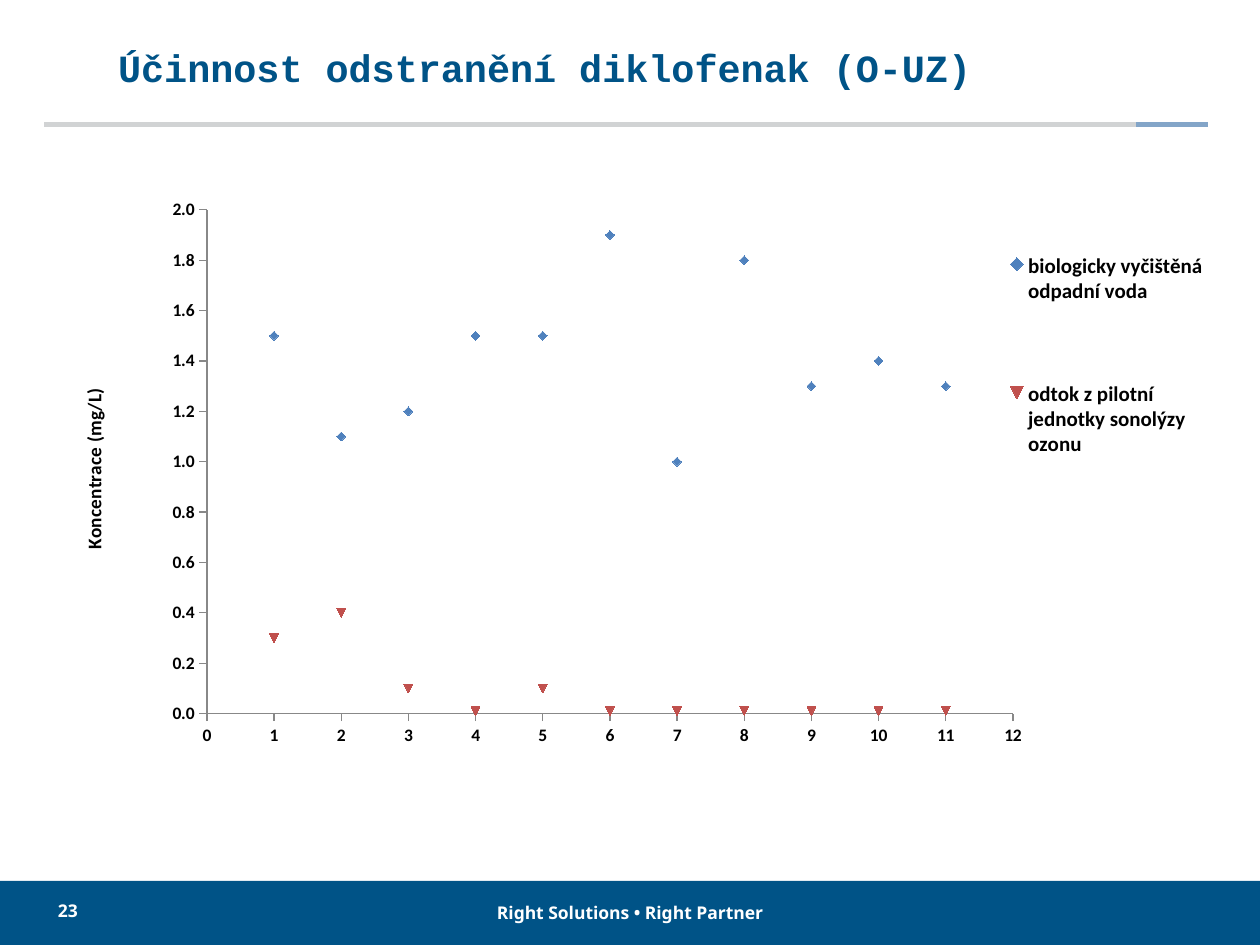
import pptx
import pptx.util
import pptx.chart.data
import pptx.dml.color
import pptx.enum.chart
import pptx.enum.shapes
import pptx.enum.text
import pptx.oxml.ns
from dataclasses import dataclass
from lxml import etree

qn = pptx.oxml.ns.qn
Inches = pptx.util.Inches
Pt = pptx.util.Pt
ALIGN = pptx.enum.text.PP_ALIGN


@dataclass(frozen=True)
class Theme:
    navy: str = "005387"
    grey: str = "D1D3D4"
    light_blue: str = "83A5C8"
    white: str = "FFFFFF"
    black: str = "000000"
    axis: str = "888888"
    series: tuple = ("4F81BD", "C0504D")
    title_font: str = "Courier New"
    footer_font: str = "Noto Sans"
    chart_font: str = "Calibri"
    title_size: int = 22
    footer_size: int = 10
    tick_size: int = 10
    axis_title_size: int = 11
    legend_size: int = 12


THEME = Theme()
CONCENTRATIONS = {
    "biologicky vyčištěná odpadní voda":
        (1.5, 1.1, 1.2, 1.5, 1.5, 1.9, 1, 1.8, 1.3, 1.4, 1.3),
    "odtok z pilotní jednotky sonolýzy ozonu":
        (0.3, 0.4, 0.1, 0.01, 0.1, 0.01, 0.01, 0.01, 0.01, 0.01, 0.01),
}


def rgb(value):
    return pptx.dml.color.RGBColor.from_string(value)


def style_font(font, name, size, color):
    font.name, font.size, font.bold = name, Pt(size), True
    font.color.rgb = rgb(color)


def add_rule(slide, left, right, y, color):
    rule = slide.shapes.add_connector(
        pptx.enum.shapes.MSO_CONNECTOR.STRAIGHT,
        Inches(left), Inches(y), Inches(right), Inches(y))
    rule.line.color.rgb = rgb(color)
    rule.line.width = Pt(3)
    etree.SubElement(rule.element.spPr, qn("a:effectLst"))


def add_header(slide, left, top, width, height):
    # Title
    title = slide.shapes.title
    title.left, title.top = Inches(left), Inches(top)
    title.width, title.height = Inches(0.88 * width), Inches(height)
    frame = title.text_frame
    frame.text = "Účinnost odstranění diklofenak (O-UZ) "
    frame.vertical_anchor = pptx.enum.text.MSO_ANCHOR.MIDDLE
    paragraph = frame.paragraphs[0]
    paragraph.alignment = ALIGN.CENTER
    style_font(paragraph.runs[0].font, THEME.title_font,
               THEME.title_size, THEME.navy)
    # Two-tone rule below the title
    right, rule_y = left + width, top + height + 0.22
    add_rule(slide, left, right, rule_y, THEME.grey)
    add_rule(slide, right - 0.57, right, rule_y, THEME.light_blue)


def add_footer(slide, left, top, width, height):
    band = slide.shapes.add_shape(
        pptx.enum.shapes.MSO_SHAPE.RECTANGLE,
        Inches(left), Inches(top), Inches(width), Inches(height))
    band.shadow.inherit = False
    band.fill.solid()
    band.fill.fore_color.rgb = rgb(THEME.navy)
    band.line.fill.background()
    # Slide number and slogan: text, left, top, alignment
    label_width = 0.283 * width
    labels = (
        ("23", left + 0.46, top + 0.15, ALIGN.LEFT),
        ("Right Solutions • Right Partner",
         left + (width - label_width) / 2, top + 0.17, ALIGN.CENTER),
    )
    for text, x, y, alignment in labels:
        label = slide.shapes.add_textbox(
            Inches(x), Inches(y), Inches(label_width), Inches(0.17))
        frame = label.text_frame
        frame.margin_left = frame.margin_right = 0
        frame.margin_top = frame.margin_bottom = 0
        frame.word_wrap = True
        frame.text = text
        paragraph = frame.paragraphs[0]
        paragraph.alignment = alignment
        style_font(paragraph.runs[0].font, THEME.footer_font,
                   THEME.footer_size, THEME.white)


def set_layout(element, index, inner=False, **shares):
    """Place an element of the chart by shares of the chart's size."""
    for old in element.findall(qn("c:layout")):
        element.remove(old)
    layout = etree.Element(qn("c:layout"))
    manual = etree.SubElement(layout, qn("c:manualLayout"))
    settings = {"layoutTarget": "inner"} if inner else {}
    settings.update(xMode="edge", yMode="edge", **shares)
    for tag, value in settings.items():
        etree.SubElement(manual, qn("c:" + tag)).set("val", str(value))
    element.insert(index, layout)


def format_axis(axis, maximum, step, number_format):
    axis.minimum_scale, axis.maximum_scale = 0, maximum
    axis.major_unit = step
    axis.has_major_gridlines = False
    axis.major_tick_mark = pptx.enum.chart.XL_TICK_MARK.OUTSIDE
    axis.minor_tick_mark = pptx.enum.chart.XL_TICK_MARK.NONE
    axis.tick_labels.number_format = number_format
    axis.tick_labels.number_format_is_linked = False
    style_font(axis.tick_labels.font, THEME.chart_font,
               THEME.tick_size, THEME.black)
    axis.format.line.color.rgb = rgb(THEME.axis)
    axis.format.line.width = Pt(0.75)


def add_concentration_chart(slide, left, top, width, height):
    data = pptx.chart.data.XyChartData()
    for name, values in CONCENTRATIONS.items():
        points = data.add_series(name)
        for sample, value in enumerate(values, start=1):
            points.add_data_point(sample, value)
    chart = slide.shapes.add_chart(
        pptx.enum.chart.XL_CHART_TYPE.XY_SCATTER,
        Inches(left), Inches(top), Inches(width), Inches(height), data).chart
    chart.has_title = False
    style_font(chart.font, THEME.chart_font, THEME.tick_size, THEME.black)

    # Markers
    chart.plots[0].vary_by_categories = False
    for series, color in zip(chart.plots[0].series, THEME.series):
        series.smooth = False
        series.format.line.fill.background()
        series.marker.size = 5
        series.marker.format.fill.solid()
        series.marker.format.fill.fore_color.rgb = rgb(color)
        series.marker.format.line.color.rgb = rgb(color)

    # Axes
    format_axis(chart.category_axis, 12, 1, "0")
    format_axis(chart.value_axis, 2, 0.2, "0.0")
    axis_title = chart.value_axis.axis_title.text_frame
    axis_title.text = "Koncentrace (mg/L)"
    style_font(axis_title.paragraphs[0].runs[0].font, THEME.chart_font,
               THEME.axis_title_size, THEME.black)

    # Legend
    chart.has_legend = True
    chart.legend.position = pptx.enum.chart.XL_LEGEND_POSITION.RIGHT
    chart.legend.include_in_layout = False
    style_font(chart.legend.font, THEME.chart_font,
               THEME.legend_size, THEME.black)

    # Placement inside the chart
    root = chart._chartSpace
    plot_area = root.find(".//" + qn("c:plotArea"))
    title = plot_area.find(".//" + qn("c:title"))
    title_body = title.find(".//" + qn("a:bodyPr"))
    title_body.set("rot", "-5400000")
    title_body.set("vert", "horz")
    set_layout(plot_area, 0, inner=True, x=0.132, y=0.053, w=0.697, h=0.769)
    set_layout(title, 1, x=0.02, y=0.32)
    set_layout(root.find(".//" + qn("c:legend")), 1,
               x=0.82, y=0, w=0.18, h=0.55)


def main():
    deck = pptx.Presentation()
    deck.slide_width, deck.slide_height = Inches(10), Inches(7.5)
    slide = deck.slides.add_slide(deck.slide_layouts.get_by_name("Title Only"))
    add_footer(slide, 0, 6.99, 10, 0.51)
    add_header(slide, 0.35, 0.3, 9.24, 0.47)
    add_concentration_chart(slide, 0.43, 1.39, 9.18, 5.2)
    deck.save("out.pptx")


if __name__ == "__main__":
    main()
